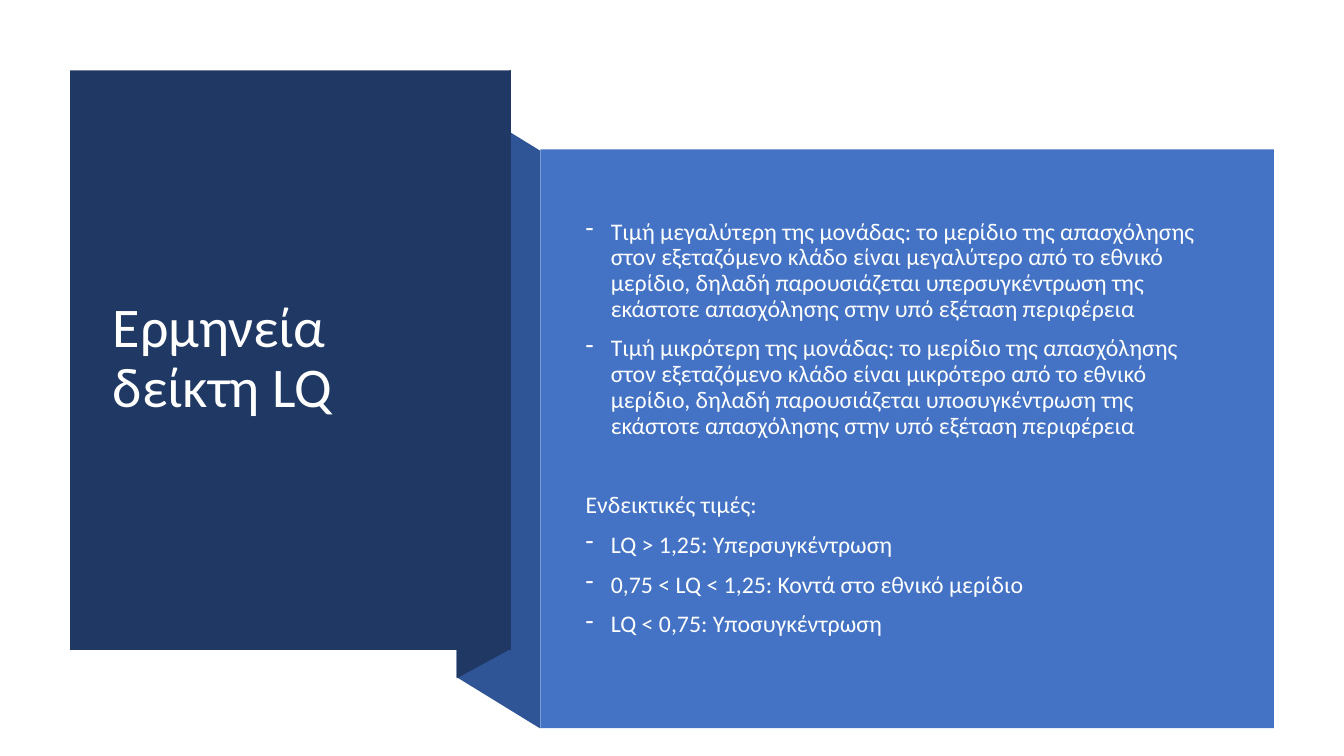
from collections import namedtuple

from lxml import etree
from pptx import Presentation
from pptx.dml.color import RGBColor
from pptx.enum.shapes import MSO_SHAPE
from pptx.enum.text import MSO_ANCHOR
from pptx.oxml.ns import qn
from pptx.util import Pt

RECTANGLE = MSO_SHAPE.RECTANGLE
MIDDLE = MSO_ANCHOR.MIDDLE

Box = namedtuple("Box", "left top width height")

FONT = "Calibri"
NAVY, BLUE, RIBBON = "203864", "4472C4", "2F5597"
WHITE, OFF_WHITE = "FFFFFF", "FEFFFF"
INDENT = 18
PARAGRAPH_GAP = 10
SECTION_GAP = 38.5

TITLE = "Ερμηνεία δείκτη LQ"
MEANINGS = [
    "Τιμή μεγαλύτερη της μονάδας: το μερίδιο της απασχόλησης στον εξεταζόμενο "
    "κλάδο είναι μεγαλύτερο από το εθνικό μερίδιο, δηλαδή παρουσιάζεται "
    "υπερσυγκέντρωση της εκάστοτε απασχόλησης στην υπό εξέταση περιφέρεια",
    "Τιμή μικρότερη της μονάδας: το μερίδιο της απασχόλησης στον εξεταζόμενο "
    "κλάδο είναι μικρότερο από το εθνικό μερίδιο, δηλαδή παρουσιάζεται "
    "υποσυγκέντρωση της εκάστοτε απασχόλησης στην υπό εξέταση περιφέρεια",
]
VALUES_HEADING = "Ενδεικτικές τιμές:"
VALUES = [
    "LQ > 1,25: Υπερσυγκέντρωση",
    "0,75 < LQ < 1,25: Κοντά στο εθνικό μερίδιο",
    "LQ < 0,75: Υποσυγκέντρωση",
]


def color(hex_string):
    return RGBColor.from_string(hex_string)


def paint(shape, fill):
    shape.shadow.inherit = False
    shape.fill.solid()
    shape.fill.fore_color.rgb = color(fill)
    shape.line.fill.background()


def add_panel(page, box, fill):
    paint(page.shapes.add_shape(RECTANGLE, *map(Pt, box)), fill)


def add_slanted_band(page, box, left_drop, right_drop, fill):
    """A band with upright sides, each side moved down by its own drop."""
    left, top, width, height = box
    right = left + width
    corners = [
        (left, top + left_drop),
        (right, top + right_drop),
        (right, top + right_drop + height),
        (left, top + left_drop + height),
    ]
    points = [(Pt(x), Pt(y)) for x, y in corners]
    builder = page.shapes.build_freeform(*points[0])
    builder.add_line_segments(points[1:], close=True)
    paint(builder.convert_to_shape(), fill)


def add_text_frame(page, box):
    frame = page.shapes.add_textbox(*map(Pt, box)).text_frame
    frame.word_wrap = True
    frame.vertical_anchor = MIDDLE
    return frame


def write(para, text, size, text_color):
    para.text = text
    para.line_spacing = 0.9
    para.font.name = FONT
    para.font.size = Pt(size)
    para.font.color.rgb = color(text_color)


def add_dash(para):
    properties = para._p.get_or_add_pPr()
    properties.set("marL", str(Pt(INDENT)))
    properties.set("indent", str(-Pt(INDENT)))
    bullet = etree.Element(qn("a:buChar"), char="-")
    properties.find(qn("a:defRPr")).addprevious(bullet)


def add_ribbon(page, box):
    # Back of the ribbon, then the short fold under the title panel
    add_slanted_band(page, Box(box.left, box.top, box.width, 412.7), 0, 36.7, RIBBON)
    add_slanted_band(page, Box(box.left, box.top, 38.5, 413.6), 0, -21, NAVY)


def add_title_panel(page, box):
    add_panel(page, box, NAVY)
    frame = add_text_frame(
        page, Box(box.left + 23.5, box.top + 26.8, box.width - 48, box.height - 54.5))
    write(frame.paragraphs[0], TITLE, 40, WHITE)


def add_body_panel(page, box):
    add_panel(page, box, BLUE)
    frame = add_text_frame(
        page, Box(box.left + 25.2, box.top + 28.8, box.width - 55.4, box.height - 72))

    # Each line: text, whether it has a dash, space before
    lines = [(text, True, PARAGRAPH_GAP) for text in MEANINGS]
    lines.append((VALUES_HEADING, False, SECTION_GAP))
    lines += [(text, True, PARAGRAPH_GAP) for text in VALUES]

    for index, (text, dashed, gap) in enumerate(lines):
        para = frame.add_paragraph() if index else frame.paragraphs[0]
        write(para, text, 17, OFF_WHITE)
        para.space_before = Pt(gap)
        if dashed:
            add_dash(para)


def main():
    deck = Presentation()
    deck.slide_width, deck.slide_height = Pt(960), Pt(540)
    page = deck.slides.add_slide(deck.slide_layouts[6])
    add_ribbon(page, Box(326.2, 71, 59.7, 450))
    add_title_panel(page, Box(50, 50.2, 315, 414))
    add_body_panel(page, Box(386, 106.7, 524, 413.5))
    deck.save("out.pptx")


if __name__ == "__main__":
    main()
